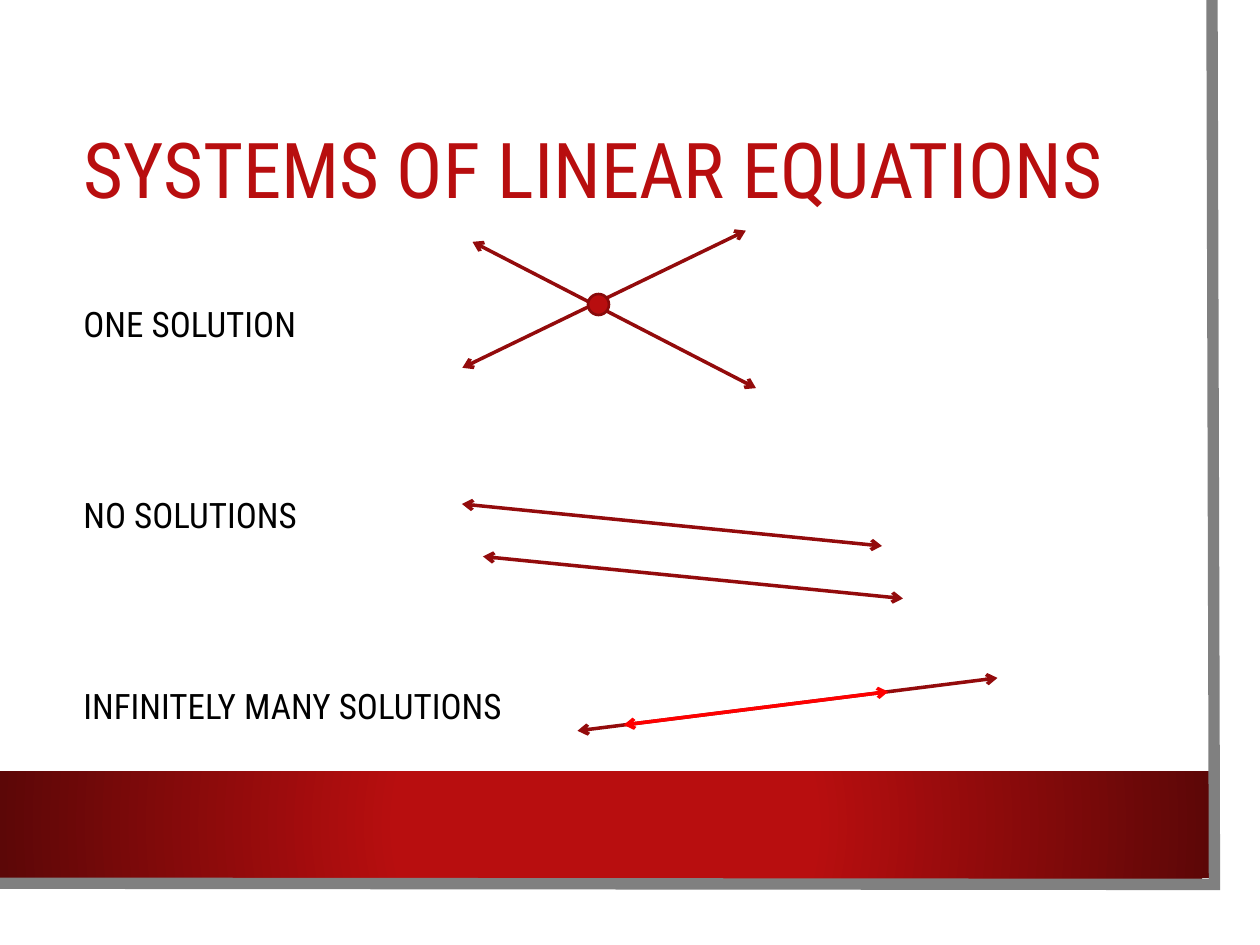
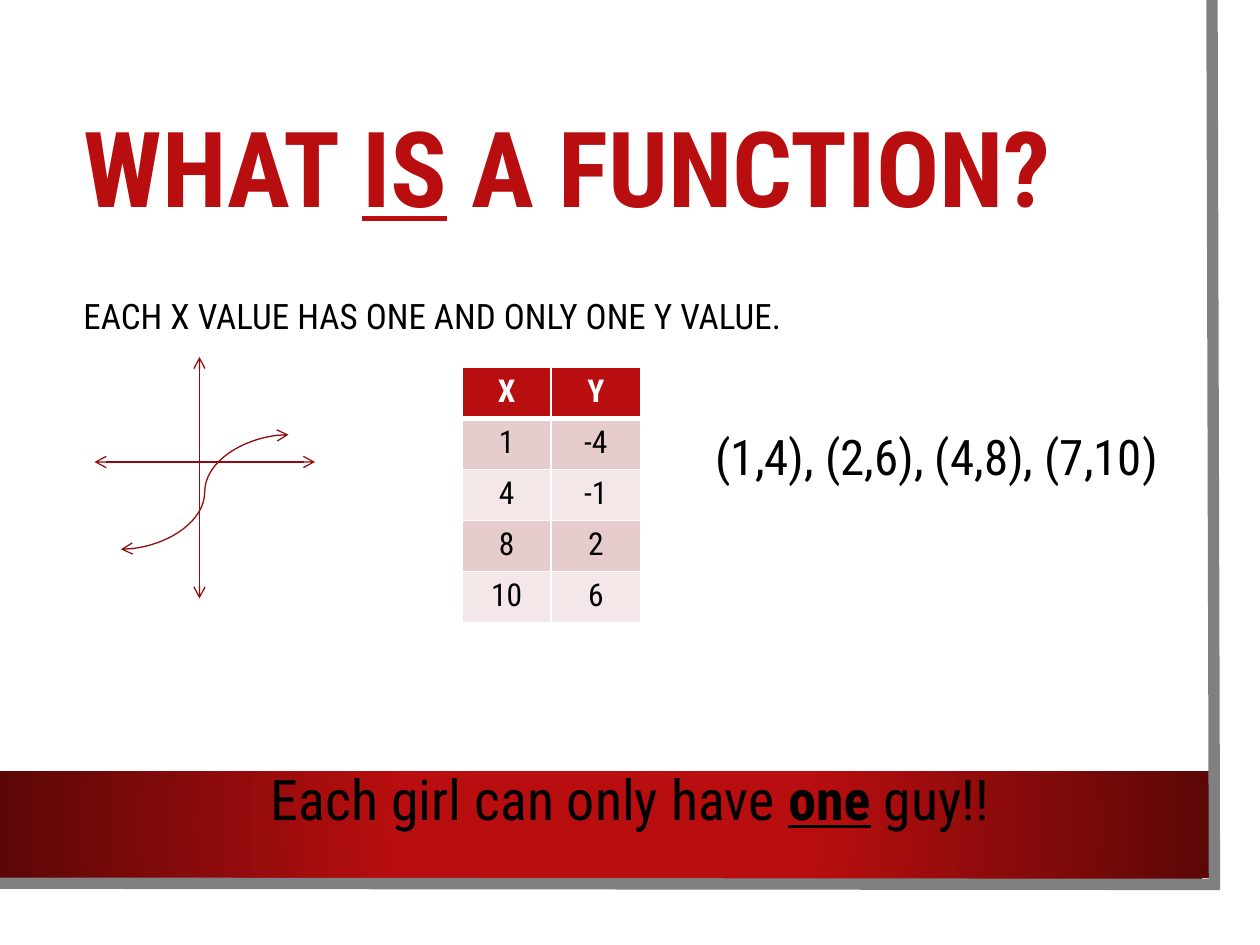
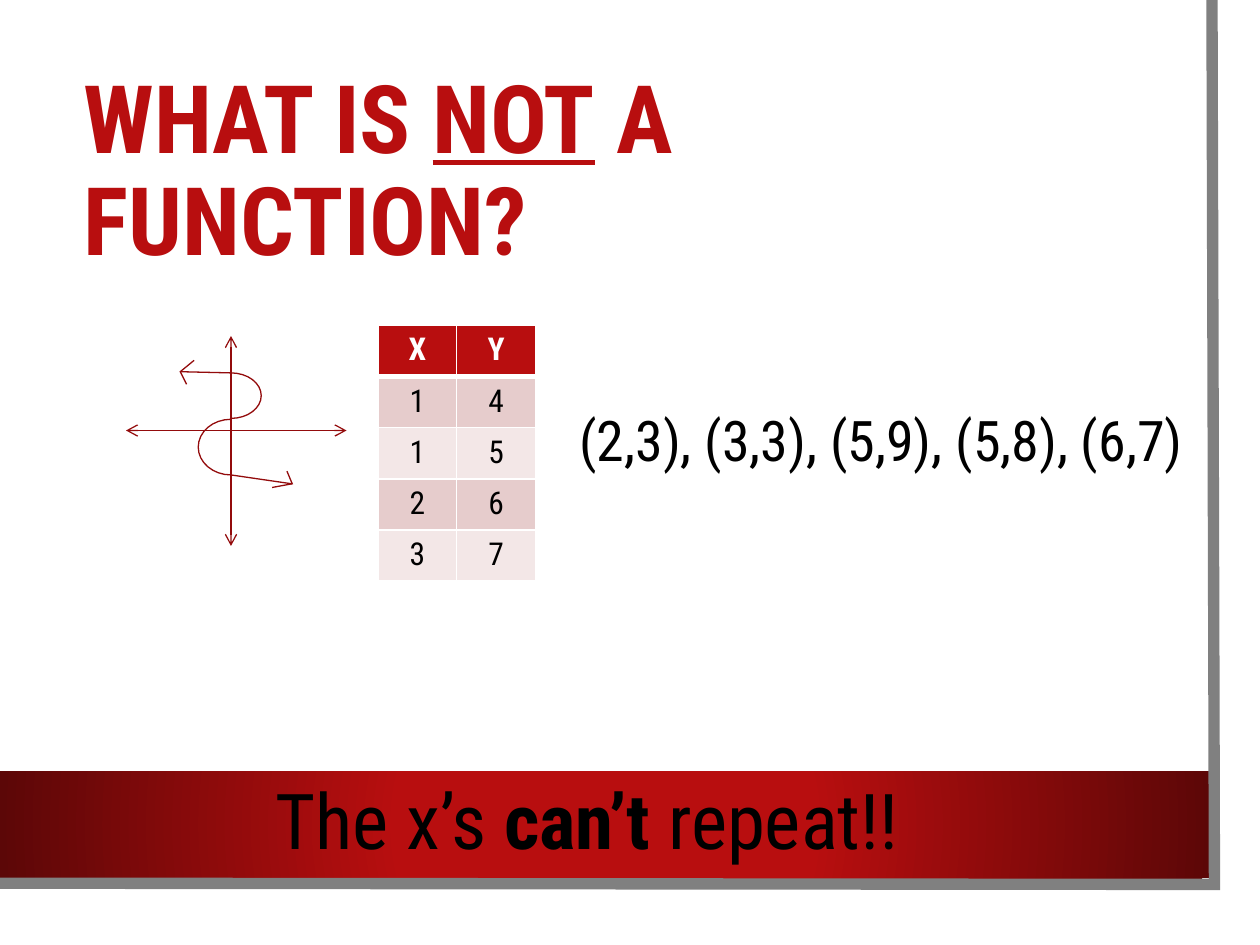
import math

from lxml import etree
from pptx import Presentation
from pptx.dml.color import RGBColor
from pptx.enum import shapes, text
from pptx.oxml import ns, parse_xml
from pptx.util import Pt

FACE = "Roboto Condensed"
RED, DARK, WINE, BRIGHT, RIM = "B80E0F", "5C0707", "930B0C", "FF0000", "880A0B"
GREY, WHITE, BLACK = "808080", "FFFFFF", "000000"
BANDS = ["E6CCCC", "F3E7E7"]
THICK, THIN = 2, 0.75
LEFT, WIDE = 40.6, 614.2
TITLE = (LEFT, 54, WIDE, 90.7)
MAIN = ns.nsdecls("a")
hue = RGBColor.from_string


def write(page, box, words, size, tint=BLACK, bold=False, mark="", lead=None, gap=0, wrap=True, align="LEFT"):
    frame = page.shapes.add_textbox(*map(Pt, box)).text_frame
    frame.word_wrap = wrap
    if wrap:
        frame.vertical_anchor = text.MSO_ANCHOR.MIDDLE
    else:
        frame.auto_size = text.MSO_AUTO_SIZE.SHAPE_TO_FIT_TEXT
    for i, row in enumerate(words.split("\n")):
        para = frame.add_paragraph() if i else frame.paragraphs[0]
        para.alignment = getattr(text.PP_ALIGN, align)
        para.line_spacing = lead
        if i:
            para.space_before = Pt(gap)
        para.font.name, para.font.size = FACE, Pt(size)
        para.font.color.rgb = hue(tint)
        para.font.bold = bold
        for j, part in enumerate(row.split("*")):
            run = para.add_run()
            run.text = part
            if j % 2:
                run.font.bold = bold or "b" in mark
                run.font.underline = "u" in mark


def trace(page, dots, tint, width):
    dots = [(Pt(x), Pt(y)) for x, y in dots]
    pen = page.shapes.build_freeform(*dots[0])
    pen.add_line_segments(dots[1:], close=False)
    shape = pen.convert_to_shape()
    shape.shadow.inherit = False
    shape.fill.background()
    shape.line.color.rgb = hue(tint)
    shape.line.width = Pt(width)
    edge = shape.element.spPr.find(ns.qn("a:ln"))
    etree.SubElement(edge, ns.qn("a:miter"), lim="800000")


deck = Presentation()
deck.slide_width, deck.slide_height = Pt(720), Pt(540)
titles = [
    ("SYSTEMS OF LINEAR EQUATIONS", 44, False),
    ("WHAT *IS* A FUNCTION?", 60, True),
    ("WHAT IS *NOT* A FUNCTION?", 54, True),
]
pages = []
for words, size, bold in titles:
    page = deck.slides.add_slide(deck.slide_layouts[6])
    pages.append(page)
    band = page.shapes.add_shape(shapes.MSO_SHAPE.RECTANGLE, Pt(0), Pt(440.6), Pt(692), Pt(61.2))
    band.shadow.inherit = False
    band.line.fill.background()
    band.element.spPr.find(ns.qn("a:prstGeom")).addnext(parse_xml(
        f'<a:gradFill {MAIN} rotWithShape="1"><a:gsLst>'
        f'<a:gs pos="34000"><a:srgbClr val="{RED}"/></a:gs>'
        f'<a:gs pos="100000"><a:srgbClr val="{DARK}"/></a:gs></a:gsLst>'
        '<a:path path="circle"><a:fillToRect l="50000" t="50000" r="50000" b="50000"/></a:path>'
        '</a:gradFill>'))
    trace(page, [(692.6, 0), (694, 505.4), (-1.4, 504.7)], GREY, 6.5)
    write(page, TITLE, words, size, RED, bold, "u", 0.9)

lines, rule, breach = pages

write(lines, (LEFT, 162.6, WIDE, 260.6), "ONE SOLUTION\nNO SOLUTIONS\nINFINITELY MANY SOLUTIONS",
      20, lead=1.1, gap=82.8)
write(rule, (LEFT, 160, WIDE, 36), "EACH X VALUE HAS ONE AND ONLY ONE Y VALUE.", 20, lead=1.2)

notes = [
    (rule, (401.8, 240.2, 281.5, 41), "(1,4), (2,6), (4,8), (7,10)", 28, "LEFT", ""),
    (rule, (137.5, 433.4, 445, 46), "Each girl can only have *one* guy!!", 32, "CENTER", "bu"),
    (breach, (324, 228.2, 378.7, 46), "(2,3), (3,3), (5,9), (5,8), (6,7)", 32, "LEFT", ""),
    (breach, (150.5, 437.8, 394.6, 60.5), "The x’s *can’t* repeat!!", 44, "LEFT", "b"),
]
for page, box, words, size, align, mark in notes:
    write(page, box, words, size, mark=mark, wrap=False, align=align)

tables = [
    (rule, 264, 209.8, 51, [("X", "Y"), (1, -4), (4, -1), (8, 2), (10, 6)]),
    (breach, 216, 186, 45, [("X", "Y"), (1, 4), (1, 5), (2, 6), (3, 7)]),
]
for page, left, top, wide, rows in tables:
    grid = page.shapes.add_table(len(rows), 2, Pt(left), Pt(top), Pt(2 * wide), Pt(146)).table
    for r, row in enumerate(rows):
        grid.rows[r].height = Pt(29.2)
        for c, value in enumerate(row):
            grid.columns[c].width = Pt(wide)
            cell = grid.cell(r, c)
            props = cell._tc.get_or_add_tcPr()
            for side in "LRTB":
                thick = 3 if (r, side) in [(0, "B"), (1, "T")] else 1
                props.append(parse_xml(
                    f'<a:ln{side} {MAIN} w="{Pt(thick)}"><a:solidFill>'
                    f'<a:srgbClr val="{WHITE}"/></a:solidFill></a:ln{side}>'))
            cell.fill.solid()
            cell.fill.fore_color.rgb = hue(BANDS[(r - 1) % 2] if r else RED)
            cell.text = str(value)
            para = cell.text_frame.paragraphs[0]
            para.alignment = text.PP_ALIGN.CENTER
            para.font.name, para.font.size = FACE, Pt(18)
            para.font.bold = r == 0
            para.font.color.rgb = hue(BLACK if r else WHITE)

arrows = []

crossing = [(270, 138.2, 432, 221.8), (264.2, 210.2, 426.2, 131.8)]
for ends in crossing:
    arrows.append((lines, "STRAIGHT", ends, WINE, THICK))

for step in range(2):
    x, y = 264 + 12 * step, 288 + 30 * step
    arrows.append((lines, "STRAIGHT", (x, y, x + 240, y + 24), WINE, THICK))

for tint, start, stop in [(WINE, 0, 1), (BRIGHT, 0.11, 0.74)]:
    ends = [v for share in (start, stop) for v in (330 + 240 * share, 417.6 - 30.2 * share)]
    arrows.append((lines, "STRAIGHT", ends, tint, THICK))

axes = [(rule, 114, 264, 54, 204, 138), (breach, 132, 246, 72, 192, 120)]
for page, x, y, left, top, high in axes:
    arrows.append((page, "STRAIGHT", (x, top, x, top + high), WINE, THIN))
    arrows.append((page, "STRAIGHT", (left, y, left + 126, y), WINE, THIN))

arrows.append((rule, "CURVE", (69.1, 313.9, 164.9, 248.4), WINE, THIN))

for page, kind, ends, tint, width in arrows:
    arrow = page.shapes.add_connector(getattr(shapes.MSO_CONNECTOR, kind), *map(Pt, ends))
    arrow.line.color.rgb = hue(tint)
    arrow.line.width = Pt(width)
    props = arrow._element.spPr
    for tip in ("a:headEnd", "a:tailEnd"):
        etree.SubElement(props.find(ns.qn("a:ln")), ns.qn(tip), type="arrow")
    etree.SubElement(props, ns.qn("a:effectLst"))

point = lines.shapes.add_shape(shapes.MSO_SHAPE.OVAL, Pt(336), Pt(168), Pt(12), Pt(12))
point.shadow.inherit = False
point.fill.solid()
point.fill.fore_color.rgb = hue(RED)
point.line.color.rgb = hue(RIM)
point.line.width = Pt(1.5)

axis, steps = 132, 16
first, last = (103, 212.4), (167, 276.5)
lobes = [(226.1, 13, 17.3), (255.5, 15.9, -18.7)]
bends = []
for mid, half, reach in lobes:
    for step in range(steps + 1):
        turn = math.pi * step / steps
        bends.append((axis + reach * math.sin(turn), mid - half * math.cos(turn)))
trace(breach, [first, *bends, last], WINE, THIN)

barbs = [
    ((110.9, 205.9), first, (106.6, 219.6)),
    ((164, 269.3), last, (155.5, 278.6)),
]
for barb in barbs:
    trace(breach, barb, WINE, THIN)

deck.save("out.pptx")
